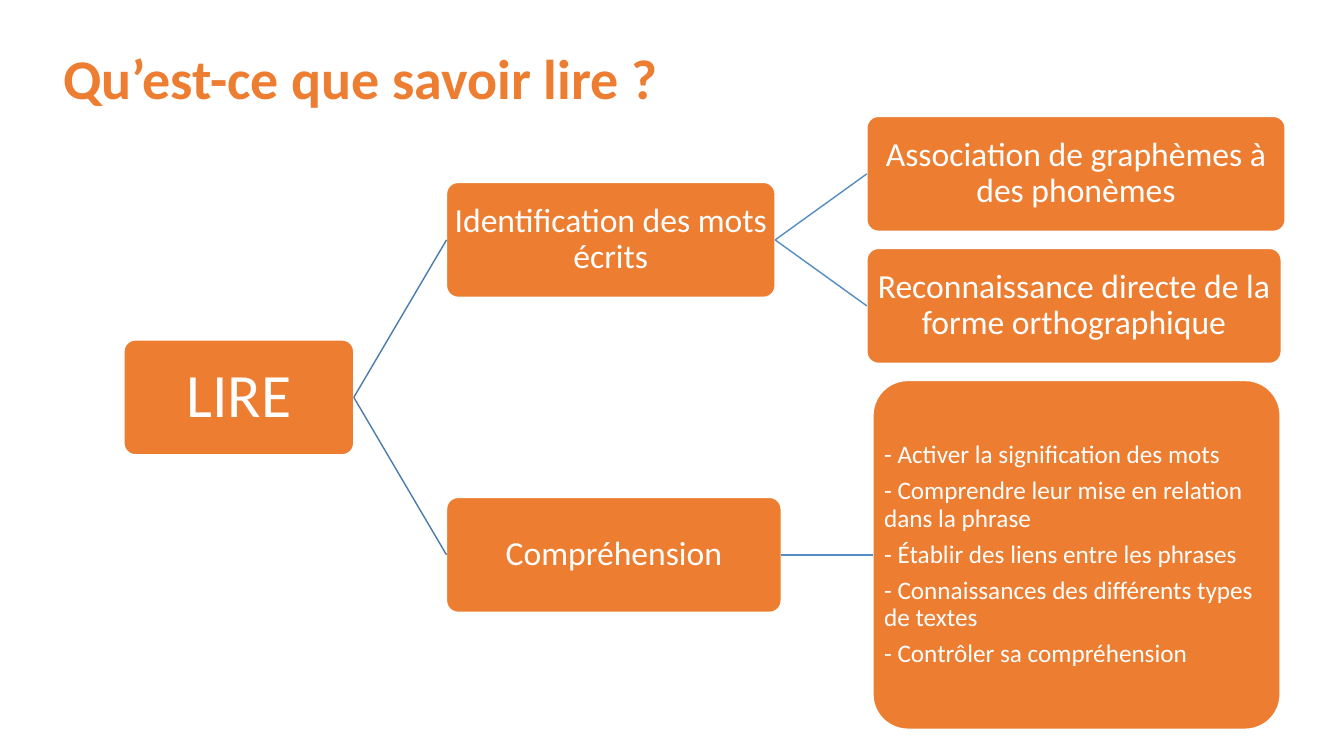
"""Build the reading skills tree slide."""
from dataclasses import dataclass

from lxml import etree
from pptx import Presentation, util as u
from pptx.dml.color import RGBColor
from pptx.enum import shapes, text
from pptx.oxml import ns


@dataclass(frozen=True)
class Theme:
    """Colours, font and type sizes."""
    main: str = "ED7D31"
    paper: str = "FFFFFF"
    trunk: str = "497CAB"
    twig: str = "538DC1"
    font: str = "Calibri"
    title: int = 40
    root: int = 44
    node: int = 24
    note: int = 18


class Tree:
    """Draw on one slide, with lengths in cells of a 40 by 30 grid."""

    def __init__(self, deck, theme):
        """Add a blank slide and work out the grid."""
        self.theme = theme
        self.col = deck.slide_width / 40
        self.row = deck.slide_height / 30
        self.shapes = deck.slides.add_slide(deck.slide_layouts[6]).shapes

    def place(self, left, top, width, height):
        """Turn grid cells into slide lengths."""
        return [round(n * size) for n, size in
                zip((left, top, width, height), (self.col, self.row) * 2)]

    def label(self, frame, lines, size, color, align, bold=False):
        """Fill a text frame with one paragraph for each line."""
        frame.word_wrap = True
        frame.vertical_anchor = text.MSO_ANCHOR.MIDDLE
        for i, line in enumerate(lines):
            para = frame.paragraphs[0] if i == 0 else frame.add_paragraph()
            para.text = line
            para.alignment = align
            para.line_spacing = 0.9
            para.space_before = u.Pt(0.35 * size if i else 0)
            font = para.font
            font.name, font.size, font.bold = self.theme.font, u.Pt(size), bold
            font.color.rgb = RGBColor.from_string(color)

    def title(self, line):
        """Add the slide title."""
        box = self.shapes.add_textbox(*self.place(1.59, 0.44, 36.69, 5.6))
        self.label(box.text_frame, [line], self.theme.title, self.theme.main,
                   text.PP_ALIGN.LEFT, True)

    def node(self, left, mid, width, lines, size, height=4.56, inset=0.02,
             align=text.PP_ALIGN.CENTER):
        """Add a rounded box centred on the row mid."""
        box = self.shapes.add_shape(
            shapes.MSO_SHAPE.ROUNDED_RECTANGLE,
            *self.place(left, mid - height / 2, width, height))
        box.adjustments[0] = 0.1
        box.shadow.inherit = False
        box.fill.solid()
        box.fill.fore_color.rgb = RGBColor.from_string(self.theme.main)
        box.line.color.rgb = RGBColor.from_string(self.theme.paper)
        box.line.width = u.Pt(1)
        frame = box.text_frame
        frame.margin_left = frame.margin_right = u.Inches(inset)
        frame.margin_top = frame.margin_bottom = u.Inches(inset)
        self.label(frame, lines, size, self.theme.paper, align)
        return box

    def link(self, start, end, color):
        """Join the right side of one box to the left side of another."""
        line = self.shapes.add_connector(
            shapes.MSO_CONNECTOR.STRAIGHT, 0, 0, 0, 0)
        line.begin_connect(start, 3)
        line.end_connect(end, 1)
        line.line.color.rgb = RGBColor.from_string(color)
        line.line.width = u.Pt(1)
        etree.SubElement(line._element.spPr, ns.qn("a:effectLst"))


def main():
    """Build and save the slide."""
    deck = Presentation()
    deck.slide_width, deck.slide_height = u.Inches(13.33), u.Inches(7.5)
    theme = Theme()
    tree = Tree(deck, theme)
    tree.title("Qu’est-ce que savoir lire ?")

    first, step, low = 6.9, 5.24, 22.02
    high = first + step / 2
    root = tree.node(3.69, (high + low) / 2, 6.84, ["LIRE"], theme.root)
    words = tree.node(13.29, high, 9.78, ["Identification des mots écrits"],
                      theme.node)
    sense = tree.node(13.29, low, 9.96, ["Compréhension"], theme.node)
    sound = tree.node(25.8, first, 12.45,
                      ["Association de graphèmes à des phonèmes"], theme.node)
    form = tree.node(25.8, first + step, 12.33,
                     ["Reconnaissance directe de la forme orthographique"],
                     theme.node)
    skills = tree.node(25.98, low, 12.12, [
        "- Activer la signification des mots",
        "- Comprendre leur mise en relation dans la phrase",
        "- Établir des liens entre les phrases",
        "- Connaissances des différents types de textes",
        "- Contrôler sa compréhension",
    ], theme.note, 13.84, 0.01, text.PP_ALIGN.LEFT)

    for start, ends, color in ((root, (words, sense), theme.trunk),
                               (words, (sound, form), theme.twig),
                               (sense, (skills,), theme.twig)):
        for end in ends:
            tree.link(start, end, color)
    deck.save("out.pptx")


if __name__ == "__main__":
    main()
